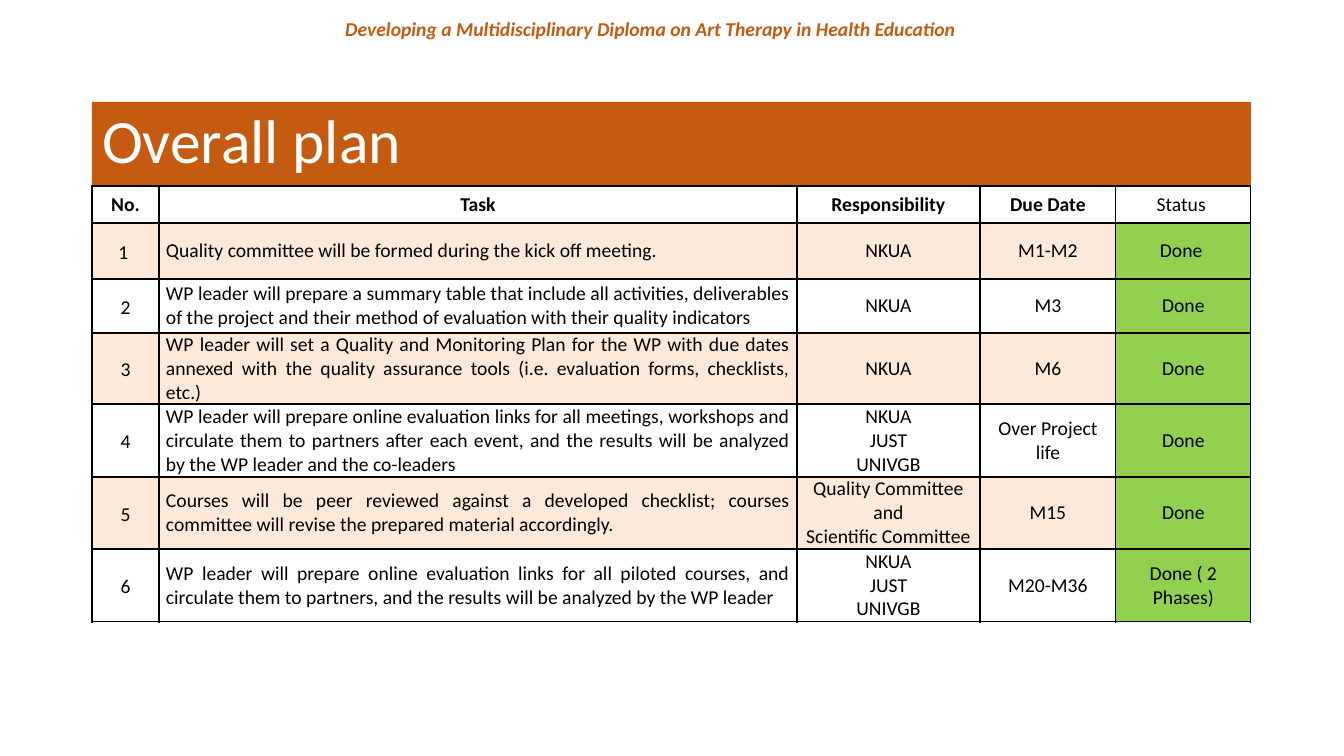
from lxml import etree
from pptx import Presentation
from pptx import util as u
from pptx.dml.color import RGBColor
from pptx.enum import text
from pptx.oxml.ns import qn

ORANGE, PEACH, GREEN = "C55A11", "FDE9D9", "92D050"
WHITE, BLACK = "FFFFFF", "000000"
CENTER, JUSTIFY, LEFT = text.PP_ALIGN.CENTER, text.PP_ALIGN.JUSTIFY, text.PP_ALIGN.LEFT

HEADERS = ["No.", "Task", "Responsibility", "Due Date", "Status "]
TASKS = [
    ["1 ", "Quality committee will be formed during the kick off meeting.",
     "NKUA", "M1-M2", "Done "],
    ["2", "WP leader will prepare a summary table that include all activities, deliverables "
     "of the project and their method of evaluation with their quality indicators ",
     "NKUA", "M3", "Done"],
    ["3", "WP leader will set a Quality and Monitoring Plan for the WP with due dates annexed "
     "with the quality assurance tools (i.e. evaluation forms, checklists, etc.) ",
     "NKUA", "M6", "Done"],
    ["4", "WP leader will prepare online evaluation links for all meetings, workshops and "
     "circulate them to partners after each event, and the results will be analyzed by the "
     "WP leader and the co-leaders",
     "NKUA\nJUST\nUNIVGB", "Over Project life", "Done"],
    ["5", "Courses will be peer reviewed against a developed checklist; courses committee "
     "will revise the prepared material accordingly.",
     "Quality Committee\nand\nScientific Committee", "M15", "Done"],
    ["6", "WP leader will prepare online evaluation links for all piloted courses, and "
     "circulate them to partners, and the results will be analyzed by the WP leader",
     "NKUA\nJUST\nUNIVGB", "M20-M36", "Done ( 2 Phases)"],
]
COLUMN_WIDTHS = [67, 638, 183, 136, 135]
ROW_HEIGHTS = [37, 56, 54, 71, 73, 72, 73]


def px(length):
    return u.Inches(length / 100.8)


def color(hex_string):
    return RGBColor.from_string(hex_string)


class PlanSlide:
    font_name = "Calibri"

    def __init__(self, presentation):
        self.slide = presentation.slides.add_slide(presentation.slide_layouts[5])

    def format_paragraph(self, paragraph, size, hex_string, align, bold=False, italic=False):
        paragraph.alignment = align
        font = paragraph.font
        font.name, font.size = self.font_name, u.Pt(size)
        font.bold, font.italic = bold, italic
        font.color.rgb = color(hex_string)

    def banner(self, wording, left, top, width, height):
        shape = self.slide.shapes.add_textbox(px(left), px(top), px(width), px(height))
        shape.text_frame.word_wrap = True
        paragraph = shape.text_frame.paragraphs[0]
        paragraph.text = wording
        self.format_paragraph(paragraph, 14, ORANGE, CENTER, bold=True, italic=True)

    def title(self, wording, left, top, width, height):
        shape = self.slide.shapes.title
        shape.left, shape.top, shape.width, shape.height = map(px, (left, top, width, height))
        shape.fill.solid()
        shape.fill.fore_color.rgb = color(ORANGE)
        frame = shape.text_frame
        frame.text = wording
        frame.auto_size = text.MSO_AUTO_SIZE.NONE
        frame.vertical_anchor = text.MSO_ANCHOR.MIDDLE
        paragraph = frame.paragraphs[0]
        paragraph.line_spacing = 0.9
        self.format_paragraph(paragraph, 44, WHITE, LEFT)

    def borders(self, cell):
        properties = cell._tc.get_or_add_tcPr()
        for side in ("a:lnL", "a:lnR", "a:lnT", "a:lnB"):
            line = etree.SubElement(properties, qn(side), w=str(u.Pt(1)))
            fill = etree.SubElement(line, qn("a:solidFill"))
            etree.SubElement(fill, qn("a:srgbClr"), val=BLACK)

    def cell(self, cell, wording, fill, align, bold, numbered):
        self.borders(cell)
        if fill:
            cell.fill.solid()
            cell.fill.fore_color.rgb = color(fill)
        else:
            cell.fill.background()
        cell.vertical_anchor = text.MSO_ANCHOR.MIDDLE
        cell.margin_left = cell.margin_right = px(7)
        cell.margin_top = cell.margin_bottom = 0
        cell.text = wording
        for paragraph in cell.text_frame.paragraphs:
            if numbered:
                paragraph.line_spacing = 1.15
                paragraph.space_after = u.Pt(10)
            self.format_paragraph(paragraph, 14, BLACK, align, bold)

    def plan_table(self, left, top):
        rows = [HEADERS] + TASKS
        table = self.slide.shapes.add_table(
            len(rows), len(HEADERS), px(left), px(top),
            px(sum(COLUMN_WIDTHS)), px(sum(ROW_HEIGHTS))).table
        table.first_row = table.horz_banding = False
        for column, width in zip(table.columns, COLUMN_WIDTHS):
            column.width = px(width)
        for row, height in zip(table.rows, ROW_HEIGHTS):
            row.height = px(height)
        for i, wordings in enumerate(rows):
            header = i == 0
            row_fill = WHITE if header else PEACH if i % 2 else None
            for j, wording in enumerate(wordings):
                status = HEADERS[j] == "Status "
                fill = GREEN if status and not header else row_fill
                align = JUSTIFY if HEADERS[j] == "Task" and not header else CENTER
                self.cell(table.cell(i, j), wording, fill, align,
                          bold=header and not status, numbered=j == 0 and not header)


def main():
    presentation = Presentation()
    presentation.slide_width, presentation.slide_height = px(1344), px(756)
    plan = PlanSlide(presentation)
    plan.banner("Developing a Multidisciplinary Diploma on Art Therapy in Health Education ",
                317, 12, 672, 34)
    plan.title("Overall plan", 92, 102, 1159, 84)
    plan.plan_table(92, 186)
    presentation.save("out.pptx")


if __name__ == "__main__":
    main()
